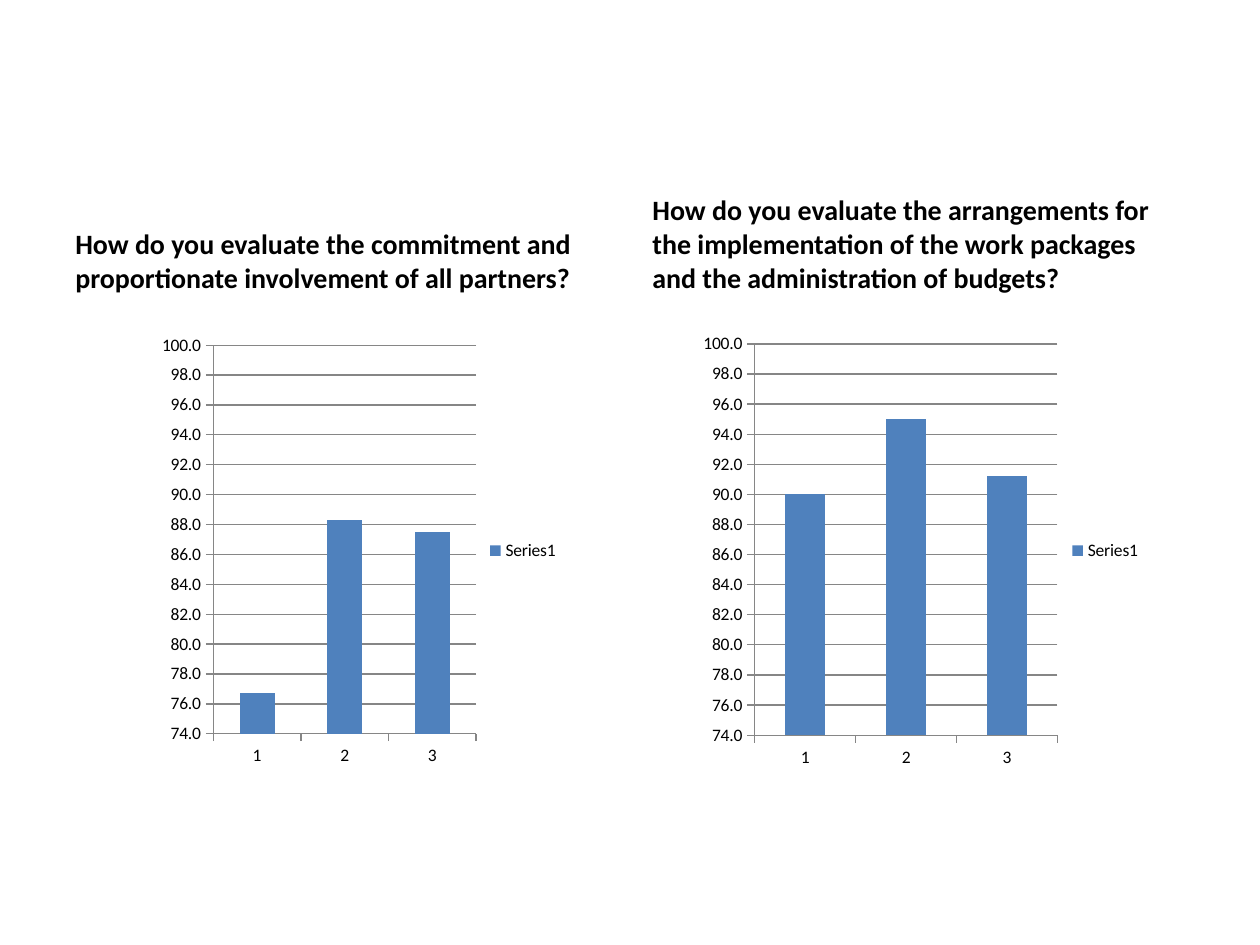
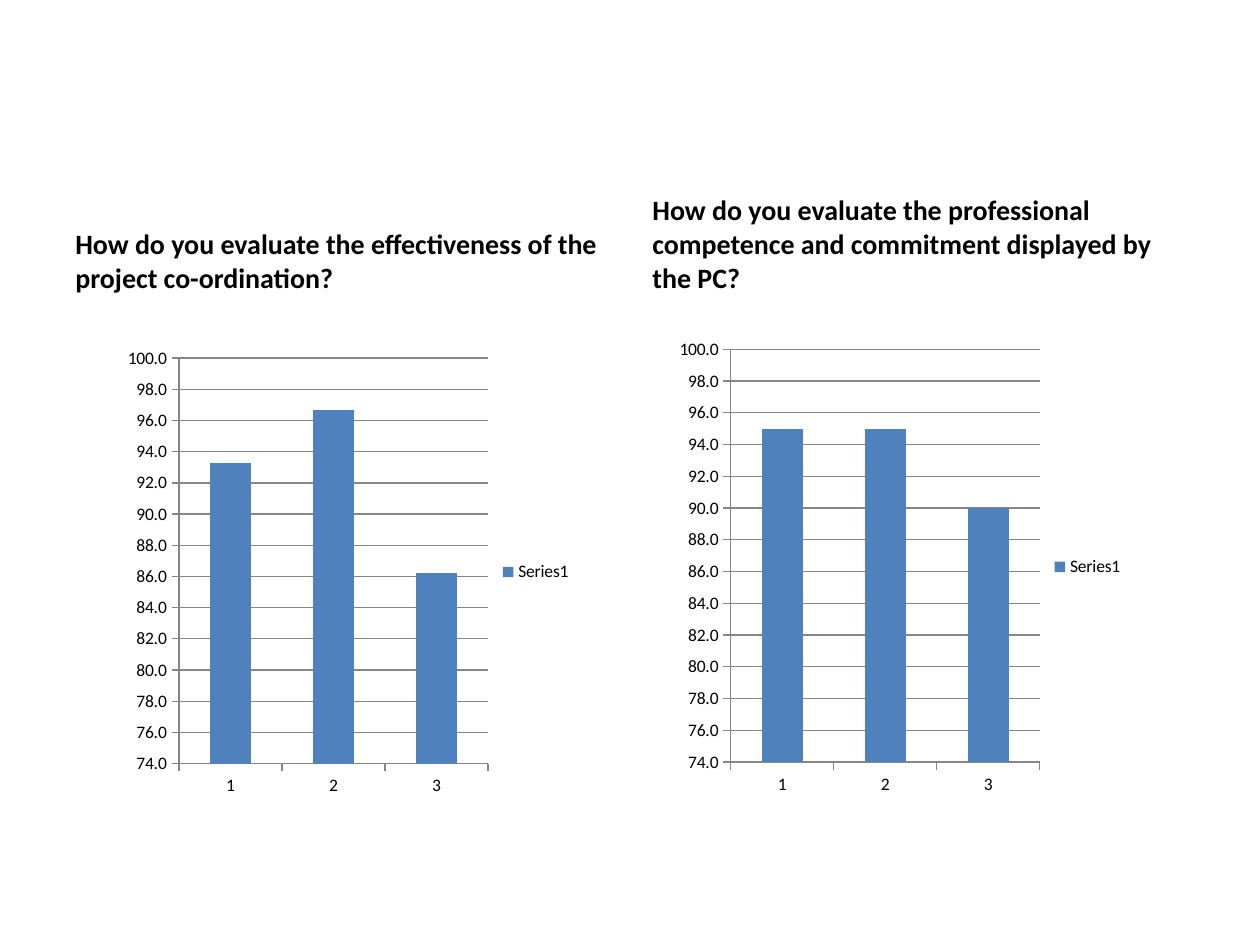
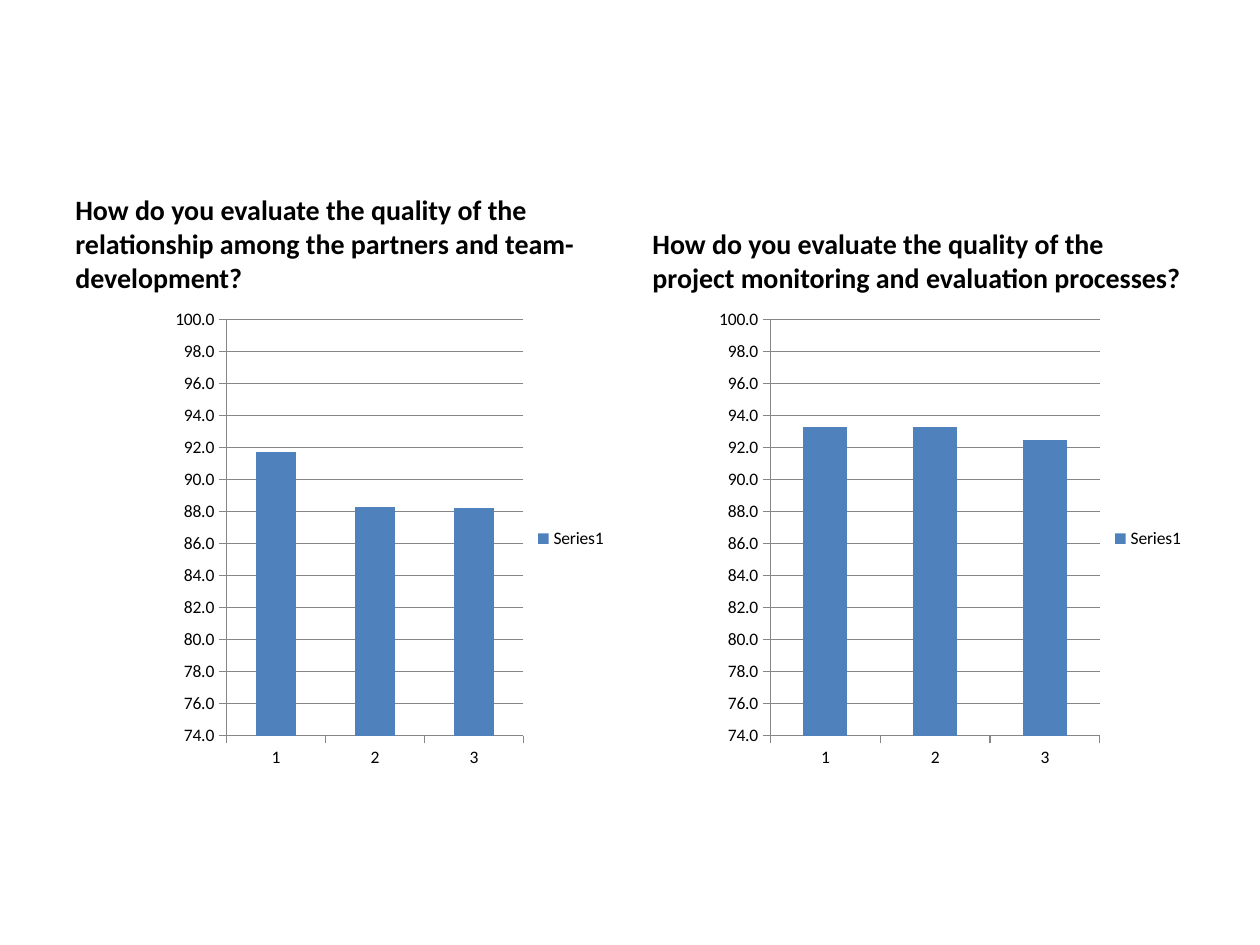
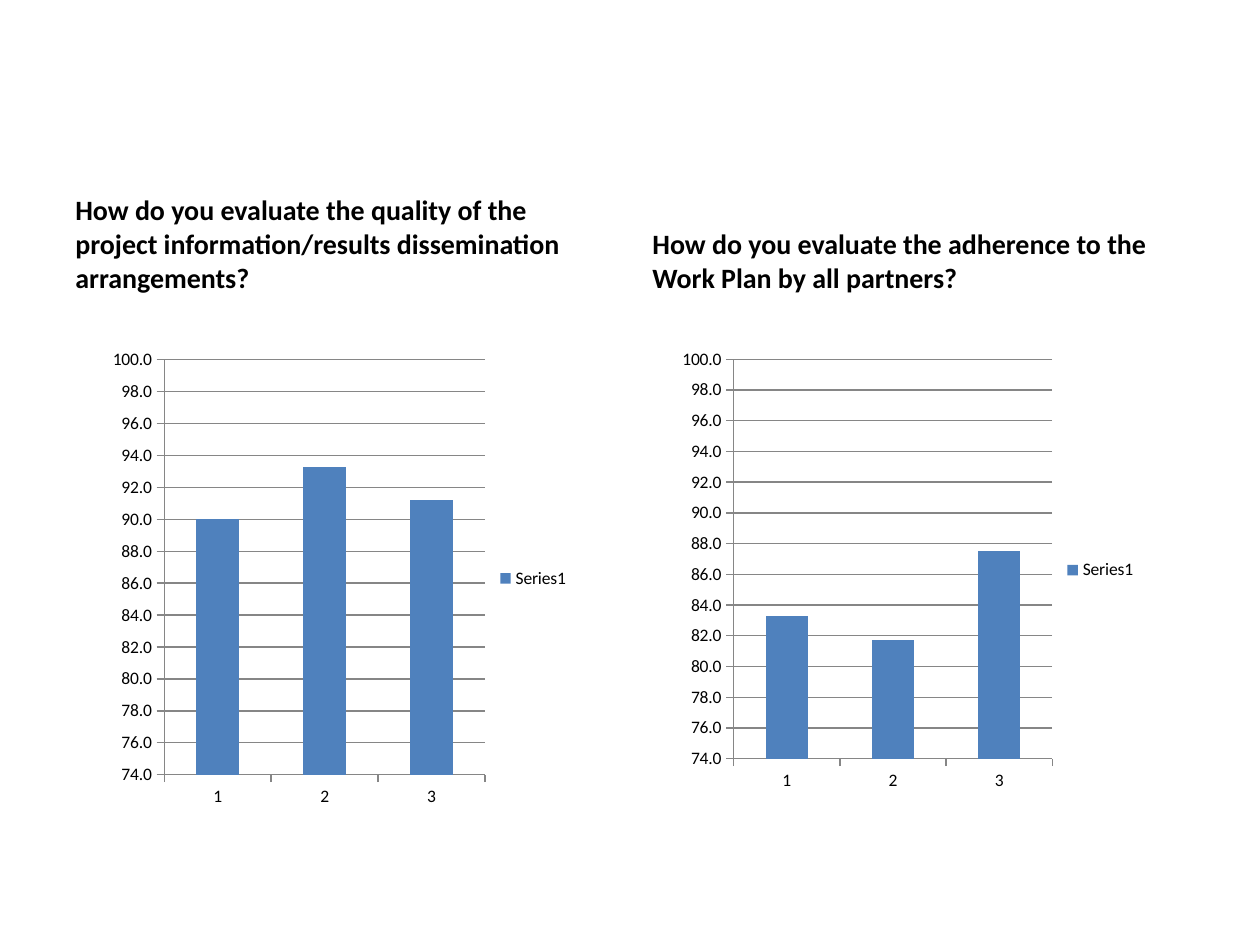
"""Build four slides that each pair two evaluation questions with their score charts."""

from dataclasses import dataclass
from typing import Any

from pptx import Presentation
from pptx.chart.data import CategoryChartData as ChartData
from pptx.dml.color import RGBColor
from pptx.enum.chart import XL_CHART_TYPE as ChartType
from pptx.enum.chart import XL_LEGEND_POSITION as LegendPosition
from pptx.enum.chart import XL_TICK_MARK as TickMark
from pptx.enum.text import MSO_ANCHOR as Anchor
from pptx.slide import Slide
from pptx.util import Pt

BLACK = RGBColor(0x00, 0x00, 0x00)
WHITE = RGBColor(0xFF, 0xFF, 0xFF)
BLUE = RGBColor(0x4F, 0x81, 0xBD)
GREY = RGBColor(0x86, 0x86, 0x86)

FONT = "Calibri"
BLANK_LAYOUT = 6
SLIDE_WIDTH, SLIDE_HEIGHT = Pt(720), Pt(540)
QUESTION_LEFTS = (Pt(36), Pt(365.76))
QUESTION_TOP, QUESTION_WIDTH, QUESTION_HEIGHT = Pt(121), Pt(318.24), Pt(50.4)
CATEGORIES = ("1", "2", "3")

QUESTION_FONT = {"name": FONT, "size": Pt(16), "bold": True}
CHART_FONT = {"name": FONT, "size": Pt(10), "bold": False}
QUESTION_FRAME = {"word_wrap": True, "vertical_anchor": Anchor.BOTTOM}
CHART_FORMAT = {"has_title": False, "has_legend": True}
LEGEND_FORMAT = {"position": LegendPosition.RIGHT, "include_in_layout": False}
BAR_FORMAT = {"gap_width": 150, "vary_by_categories": False}
AXIS_FORMAT = {"major_tick_mark": TickMark.OUTSIDE, "minor_tick_mark": TickMark.NONE}
SCORE_SCALE = {
    "minimum_scale": 74,
    "maximum_scale": 100,
    "major_unit": 2,
    "has_major_gridlines": True,
}
SCORE_LABELS = {"number_format": "0.0", "number_format_is_linked": False}


@dataclass(frozen=True)
class Evaluation:
    """A question, its scores and the chart's box in points."""

    question: str
    scores: tuple[float, ...]
    left: float
    top: float
    width: float
    height: float


SLIDES = (
    (
        Evaluation(
            "How do you evaluate the commitment and proportionate involvement of all partners?",
            (76.7, 88.3, 87.5), 87.8, 186.5, 239, 256.3,
        ),
        Evaluation(
            "How do you evaluate the arrangements for the implementation of the work packages "
            "and the administration of budgets?",
            (90, 95, 91.2), 396.7, 185.8, 262.8, 257.8,
        ),
    ),
    (
        Evaluation(
            "How do you evaluate the effectiveness of the project co-ordination?",
            (93.3, 96.7, 86.2), 67.7, 193.7, 266.4, 266.4,
        ),
        Evaluation(
            "How do you evaluate the professional competence and commitment displayed by the PC?",
            (95, 95, 90), 383, 188.6, 266.4, 270.7,
        ),
    ),
    (
        Evaluation(
            "How do you evaluate the quality of the relationship among the partners "
            "and team-development?",
            (91.7, 88.3, 88.2), 95, 171.4, 259.2, 272.9,
        ),
        Evaluation(
            "How do you evaluate the quality of the project monitoring and evaluation processes?",
            (93.3, 93.3, 92.5), 405.4, 171.4, 278.6, 272.9,
        ),
    ),
    (
        Evaluation(
            "How do you evaluate the quality of the project information/results "
            "dissemination arrangements?",
            (90, 93.3, 91.2), 59, 194.4, 273.6, 272.2,
        ),
        Evaluation(
            "How do you evaluate the adherence to the Work Plan by all partners?",
            (83.3, 81.7, 87.5), 384.5, 194.4, 272.2, 262.8,
        ),
    ),
)


def apply(target: Any, values: dict[str, Any]) -> None:
    """Set each named attribute of the target."""
    for name, value in values.items():
        setattr(target, name, value)


def style_font(font: Any, values: dict[str, Any]) -> None:
    """Give a font its format values in black."""
    apply(font, values)
    font.color.rgb = BLACK


def style_line(line: Any) -> None:
    """Make a line thin and grey."""
    line.color.rgb = GREY
    line.width = Pt(0.75)


def add_question(slide: Slide, left: int, question: str) -> None:
    """Write a bold question standing on the bottom of its box."""
    heading = slide.shapes.add_textbox(left, QUESTION_TOP, QUESTION_WIDTH, QUESTION_HEIGHT)
    apply(heading.text_frame, QUESTION_FRAME)
    wording = heading.text_frame.paragraphs[0].add_run()
    wording.text = question
    style_font(wording.font, QUESTION_FONT)


def add_scores(slide: Slide, evaluation: Evaluation) -> None:
    """Draw the column chart of one evaluation."""
    scores = ChartData(number_format="0.0")
    scores.categories = CATEGORIES
    scores.add_series("Series1", evaluation.scores)
    box = (evaluation.left, evaluation.top, evaluation.width, evaluation.height)
    chart = slide.shapes.add_chart(ChartType.COLUMN_CLUSTERED, *map(Pt, box), scores).chart
    apply(chart, CHART_FORMAT)
    style_font(chart.font, CHART_FONT)
    apply(chart.legend, LEGEND_FORMAT)

    bars = chart.plots[0]
    apply(bars, BAR_FORMAT)
    bars.series[0].format.fill.solid()
    bars.series[0].format.fill.fore_color.rgb = BLUE

    for axis in (chart.category_axis, chart.value_axis):
        apply(axis, AXIS_FORMAT)
        style_line(axis.format.line)
    apply(chart.value_axis, SCORE_SCALE)
    apply(chart.value_axis.tick_labels, SCORE_LABELS)
    style_line(chart.value_axis.major_gridlines.format.line)


def main() -> None:
    """Build and save the deck."""
    deck = Presentation()
    apply(deck, {"slide_width": SLIDE_WIDTH, "slide_height": SLIDE_HEIGHT})
    for evaluations in SLIDES:
        slide = deck.slides.add_slide(deck.slide_layouts[BLANK_LAYOUT])
        slide.background.fill.solid()
        slide.background.fill.fore_color.rgb = WHITE
        for left, evaluation in zip(QUESTION_LEFTS, evaluations):
            add_question(slide, left, evaluation.question)
        for evaluation in evaluations:
            add_scores(slide, evaluation)
    deck.save("out.pptx")


if __name__ == "__main__":
    main()
